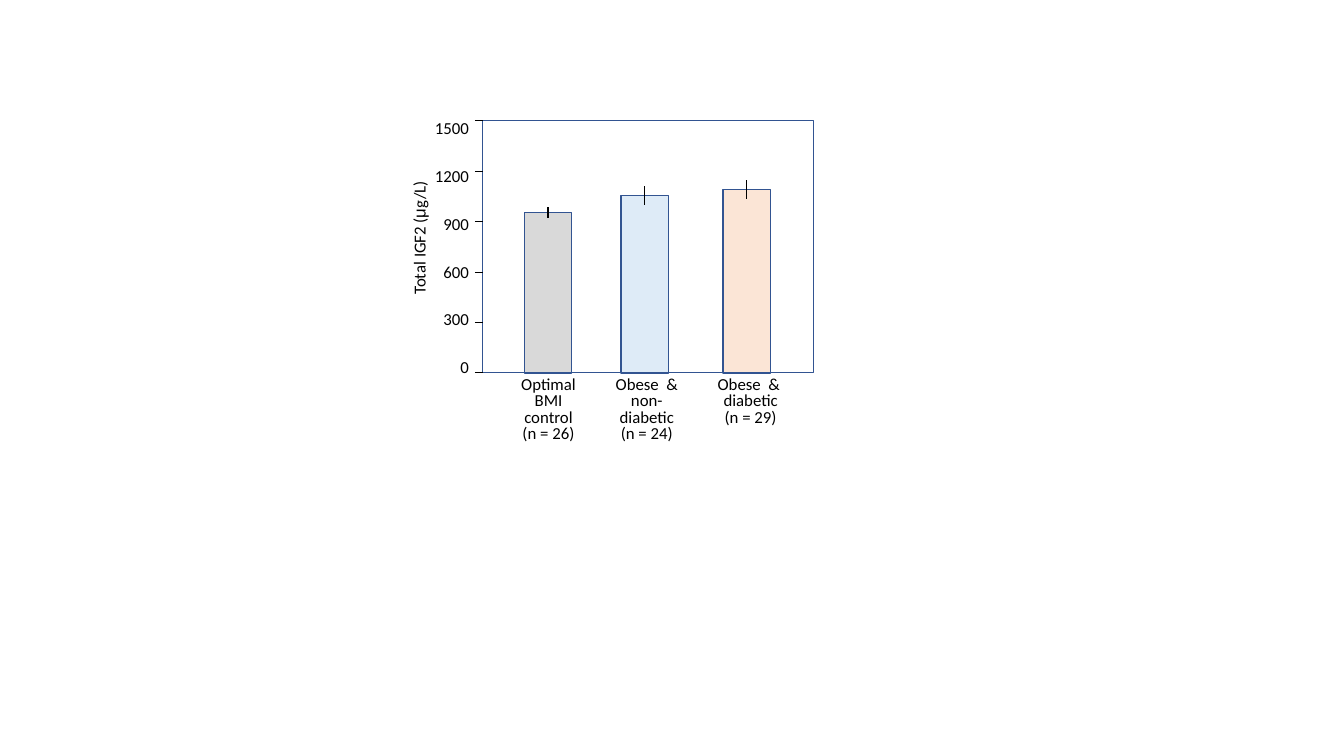
from dataclasses import dataclass

from lxml.etree import SubElement
from pptx import Presentation
from pptx.dml.color import RGBColor
from pptx.enum.shapes import MSO_CONNECTOR as Connector, MSO_SHAPE as Preset
from pptx.enum.text import MSO_ANCHOR as Anchor, PP_ALIGN as Align
from pptx.oxml.ns import qn
from pptx.shapes.autoshape import Shape
from pptx.slide import Slide
from pptx.text.text import TextFrame
from pptx.util import Inches, Pt

COLORS = {
    "text": "000000",
    "outline": "325491",
    "control": "D9D9D9",
    "non_diabetic": "DEEBF7",
    "diabetic": "FBE5D6",
}

# Plot geometry in inches, axis in µg/L
PLOT_LEFT, PLOT_TOP, PLOT_WIDTH, PLOT_HEIGHT = 4.79, 1.2, 3.28, 2.5
AXIS_MAX, AXIS_STEP = 1500, 300
TICK_LENGTH = 0.08
BAR_WIDTH = 0.47


@dataclass
class Group:
    name: str
    count: str
    value: float
    error: float
    color: str
    bar_left: float
    label_left: float
    label_width: float
    label_height: float


GROUPS = [
    Group("Optimal BMI control", "(n = 26)", 954, 33, "control", 5.2, 4.98, 0.92, 0.75),
    Group("Obese  & non-diabetic", "(n = 24)", 1056, 54, "non_diabetic", 6.16, 5.94, 0.95, 0.75),
    Group("Obese  &  diabetic", "(n = 29)", 1092, 54, "diabetic", 7.17, 6.97, 0.95, 0.59),
]


def color(key: str) -> RGBColor:
    return RGBColor.from_string(COLORS[key])


def y_of(value: float) -> float:
    return PLOT_TOP + PLOT_HEIGHT * (1 - value / AXIS_MAX)


def add_box(slide: Slide, left: float, top: float, width: float, height: float,
            line_width: float, fill: str = "") -> Shape:
    shape = slide.shapes.add_shape(
        Preset.RECTANGLE, Inches(left), Inches(top), Inches(width), Inches(height))
    shape.shadow.inherit = False
    if fill:
        shape.fill.solid()
        shape.fill.fore_color.rgb = color(fill)
    else:
        shape.fill.background()
    shape.line.color.rgb = color("outline")
    shape.line.width = Pt(line_width)
    return shape


def add_line(slide: Slide, x1: float, y1: float, x2: float, y2: float, width: float) -> None:
    line = slide.shapes.add_connector(
        Connector.STRAIGHT, Inches(x1), Inches(y1), Inches(x2), Inches(y2))
    line.line.color.rgb = color("text")
    line.line.width = Pt(width)
    SubElement(line.element.spPr, qn("a:effectLst"))


def add_text(slide: Slide, left: float, top: float, width: float, height: float,
             paragraphs: list[list[tuple[str, str]]], align: Align = Align.CENTER,
             spacing: float = 0.8, space_after: float = 0, wrap: bool = True) -> Shape:
    """Each paragraph is a list of (text, font) runs."""
    shape = slide.shapes.add_textbox(Inches(left), Inches(top), Inches(width), Inches(height))
    frame: TextFrame = shape.text_frame
    frame.word_wrap = wrap
    frame.vertical_anchor = Anchor.TOP
    for index, runs in enumerate(paragraphs):
        paragraph = frame.add_paragraph() if index else frame.paragraphs[0]
        paragraph.alignment = align
        paragraph.line_spacing = spacing
        paragraph.space_after = Pt(space_after)
        for text, font in runs:
            run = paragraph.add_run()
            run.text = text
            run.font.name = font
            run.font.size = Pt(12)
            run.font.color.rgb = color("text")
    return shape


def add_axis(slide: Slide) -> None:
    # Plot frame
    add_box(slide, PLOT_LEFT, PLOT_TOP, PLOT_WIDTH, PLOT_HEIGHT, 0.75)

    # Axis title
    title = add_text(slide, 2.93, 2.23, 2.49, 0.26,
                     [[("Total IGF2 (", "Calibri"), ("μ", "Arial"), ("g/L)", "Calibri")]])
    title.rotation = 270

    # Ticks and their labels
    values = range(AXIS_MAX, -1, -AXIS_STEP)
    for value in values:
        add_line(slide, PLOT_LEFT - TICK_LENGTH, y_of(value), PLOT_LEFT, y_of(value), 0.75)
    add_text(slide, 4.21, 1.08, 0.54, 2.75, [[(str(value), "Calibri")] for value in values],
             Align.RIGHT, 1.2, 16.9, wrap=False)


def add_group(slide: Slide, group: Group) -> None:
    # Bar
    top = y_of(group.value)
    add_box(slide, group.bar_left, top, BAR_WIDTH, y_of(0) - top, 1, group.color)

    # Error bar
    center = group.bar_left + BAR_WIDTH / 2
    add_line(slide, center, y_of(group.value + group.error),
             center, y_of(group.value - group.error), 1)

    # Label
    add_text(slide, group.label_left, y_of(0), group.label_width, group.label_height,
             [[(group.name, "Calibri")], [(group.count, "Calibri")]])


def main() -> None:
    presentation = Presentation()
    presentation.slide_width = Inches(13.33)
    presentation.slide_height = Inches(7.5)
    slide = presentation.slides.add_slide(presentation.slide_layouts[6])
    add_axis(slide)
    for group in GROUPS:
        add_group(slide, group)
    presentation.save("out.pptx")


if __name__ == "__main__":
    main()
